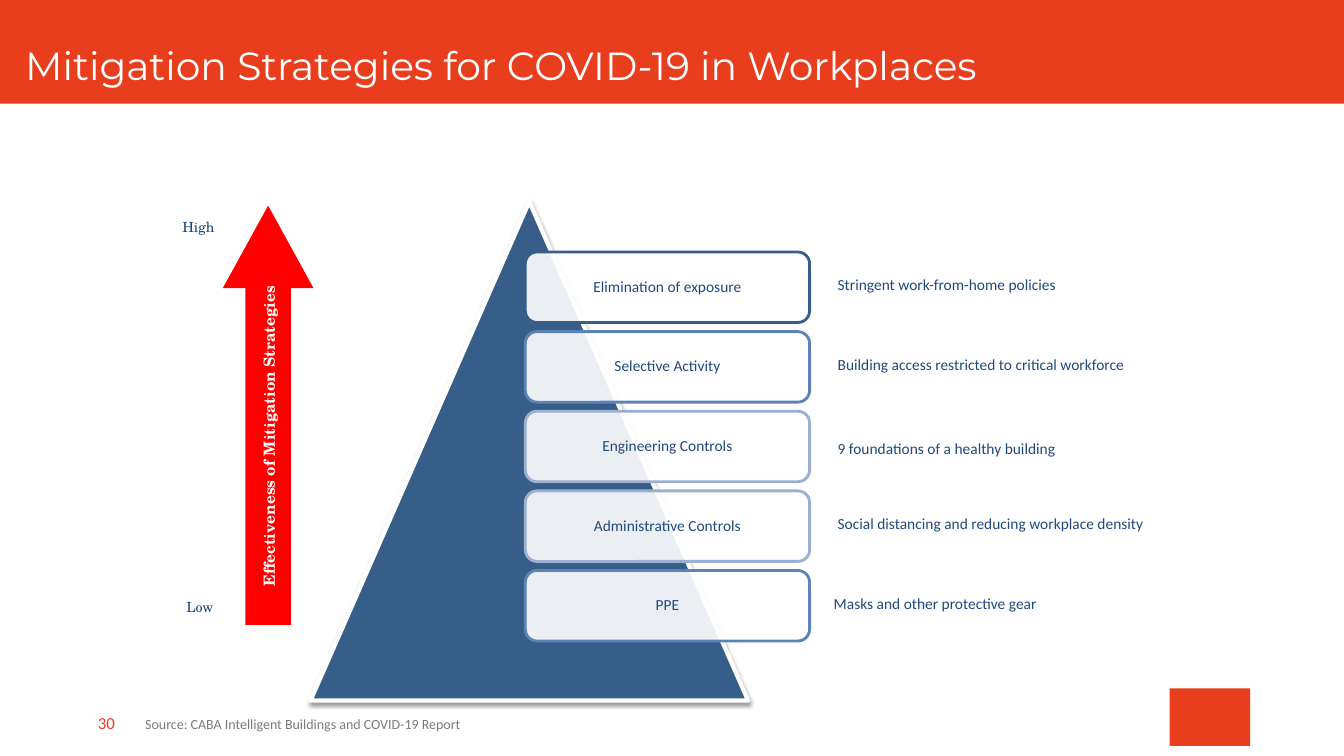
from dataclasses import dataclass

from lxml import etree
from pptx import Presentation
from pptx.dml.color import RGBColor
from pptx.enum.shapes import MSO_SHAPE
from pptx.enum.text import MSO_ANCHOR, MSO_AUTO_SIZE, PP_ALIGN
from pptx.oxml.ns import qn
from pptx.util import Inches, Pt

RECTANGLE = MSO_SHAPE.RECTANGLE
ROUNDED = MSO_SHAPE.ROUNDED_RECTANGLE
TRIANGLE = MSO_SHAPE.ISOSCELES_TRIANGLE
UP_ARROW = MSO_SHAPE.UP_ARROW
TOP, MIDDLE = MSO_ANCHOR.TOP, MSO_ANCHOR.MIDDLE
LEFT, CENTER, JUSTIFY = PP_ALIGN.LEFT, PP_ALIGN.CENTER, PP_ALIGN.JUSTIFY
FIXED = MSO_AUTO_SIZE.NONE

ORANGE = RGBColor(0xE8, 0x3E, 0x1D)
WHITE = RGBColor(0xFF, 0xFF, 0xFF)
GRAY = RGBColor(0x7B, 0x7B, 0x7B)
RED = RGBColor(0xFF, 0x00, 0x00)
NAVY = RGBColor(0x1F, 0x49, 0x7D)
DEEP_BLUE = RGBColor(0x36, 0x5E, 0x89)
MID_BLUE = RGBColor(0x5C, 0x83, 0xB8)
PALE_BLUE = RGBColor(0x9B, 0xAF, 0xD0)

SANS, SERIF, HEADING = "Calibri", "TeX Gyre Schola", "Montserrat"
TITLE_ONLY = 5
NO_INSETS = (0, 0, 0, 0)
TEXT_INSETS = (0.1, 0.05, 0.1, 0.05)
LEVEL_INSETS = (0.05, 0.05, 0.05, 0.05)
LEVEL_TOP, LEVEL_PITCH = 2.5, 0.79


@dataclass
class Box:
    left: float
    top: float
    width: float
    height: float

    def lengths(self) -> list:
        return [Inches(v) for v in (self.left, self.top, self.width, self.height)]


@dataclass
class TextStyle:
    size: float
    color: RGBColor
    font: str = SANS
    bold: bool = False
    align: int = LEFT
    anchor: int = TOP
    spacing: float = 1.0
    insets: tuple = TEXT_INSETS


@dataclass
class Level:
    name: str
    border: RGBColor
    measure: str
    measure_width: float
    measure_left: float = 8.21
    measure_drop: float = 0.18


@dataclass
class Label:
    text: str
    box: Box
    style: TextStyle
    rotation: float = 0


TITLE_STYLE = TextStyle(28, WHITE, HEADING, insets=(0, 0.01, 0, 0))
LEVEL_STYLE = TextStyle(11, NAVY, align=CENTER, anchor=MIDDLE, spacing=0.9, insets=LEVEL_INSETS)
MEASURE_STYLE = TextStyle(11, NAVY)
SCALE_STYLE = TextStyle(10, NAVY, SERIF, align=JUSTIFY, anchor=MIDDLE, spacing=1.6)
ARROW_STYLE = TextStyle(11, WHITE, SERIF, True, CENTER, MIDDLE)
NUMBER_STYLE = TextStyle(12, ORANGE, spacing=1.03, insets=NO_INSETS)
SOURCE_STYLE = TextStyle(10, GRAY, spacing=1.04, insets=NO_INSETS)

LEVELS = [
    Level("Elimination of exposure", DEEP_BLUE, "Stringent work-from-home policies", 2.97),
    Level("Selective Activity", MID_BLUE, "Building access restricted to critical workforce", 3.87),
    Level("Engineering Controls", PALE_BLUE, "9 foundations of a healthy building", 2.97,
          measure_drop=0.23),
    Level("Administrative Controls", PALE_BLUE,
          "Social distancing and reducing workplace density", 4.17),
    Level("PPE", MID_BLUE, "Masks and other protective gear", 2.81, measure_left=8.17),
]

LABELS = [
    Label("Low", Box(1.75, 5.78, 0.59, 0.39), SCALE_STYLE),
    Label("High", Box(1.71, 2.01, 0.65, 0.39), SCALE_STYLE),
    Label("Effectiveness of Mitigation Strategies", Box(0.79, 4.1, 3.75, 0.45), ARROW_STYLE, 270),
    Label("30", Box(0.97, 7.06, 0.25, 0.19), NUMBER_STYLE),
    Label("Source: CABA Intelligent Buildings and COVID-19 Report",
          Box(1.44, 7.09, 3.75, 0.19), SOURCE_STYLE),
]


def apply(target, values: dict) -> None:
    for name, value in values.items():
        setattr(target, name, value)


def write(shape, text: str, style: TextStyle) -> None:
    frame = shape.text_frame
    frame.text = text
    sides = ("margin_left", "margin_top", "margin_right", "margin_bottom")
    apply(frame, dict(zip(sides, map(Inches, style.insets))))
    apply(frame, {"word_wrap": True, "auto_size": FIXED, "vertical_anchor": style.anchor})
    paragraph = frame.paragraphs[0]
    apply(paragraph, {"alignment": style.align, "line_spacing": style.spacing})
    font = paragraph.runs[0].font
    apply(font, {"size": Pt(style.size), "name": style.font, "bold": style.bold})
    font.color.rgb = style.color


def add_label(slide, label: Label) -> None:
    text_box = slide.shapes.add_textbox(*label.box.lengths())
    text_box.rotation = label.rotation
    write(text_box, label.text, label.style)


def add_figure(slide, preset: int, box: Box, fill: RGBColor,
               border: RGBColor | None = None, border_width: float = 0):
    figure = slide.shapes.add_shape(preset, *box.lengths())
    figure.shadow.inherit = False
    figure.fill.solid()
    figure.fill.fore_color.rgb = fill
    if border is None:
        figure.line.fill.background()
    else:
        figure.line.color.rgb = border
        figure.line.width = Pt(border_width)
    return figure


def set_opacity(color_element, percent: int) -> None:
    etree.SubElement(color_element, qn("a:alpha"), val=str(percent * 1000))


def add_drop_shadow(figure) -> None:
    effects = figure._element.spPr.find(qn("a:effectLst"))
    shadow = etree.SubElement(effects, qn("a:outerShdw"), blurRad=str(Pt(3.1)),
                              dist=str(Pt(1.6)), dir="5400000", rotWithShape="0")
    set_opacity(etree.SubElement(shadow, qn("a:srgbClr"), val="000000"), 38)


def add_level(slide, index: int, level: Level) -> None:
    top = LEVEL_TOP + index * LEVEL_PITCH
    card = add_figure(slide, ROUNDED, Box(5.21, top, 2.82, 0.7), WHITE, level.border, 2)
    set_opacity(card._element.spPr.find(qn("a:solidFill"))[0], 90)
    write(card, level.name, LEVEL_STYLE)
    measure_box = Box(level.measure_left, top + level.measure_drop, level.measure_width, 0.34)
    add_label(slide, Label(level.measure, measure_box, MEASURE_STYLE))


def main() -> None:
    deck = Presentation()
    deck.slide_width, deck.slide_height = Inches(13.33), Inches(7.5)
    slide = deck.slides.add_slide(deck.slide_layouts[TITLE_ONLY])

    # Banner with the title in front, and the emblem block
    banner = add_figure(slide, RECTANGLE, Box(0, 0, 13.33, 1.03), ORANGE)
    heading = slide.shapes.title
    heading._element.addprevious(banner._element)
    heading.left, heading.top, heading.width, heading.height = Box(0.25, 0.4, 11.5, 0.49).lengths()
    write(heading, "Mitigation Strategies for COVID-19 in Workplaces", TITLE_STYLE)
    add_figure(slide, RECTANGLE, Box(11.6, 6.83, 0.8, 0.57), ORANGE)

    # Pyramid and its levels
    pyramid = add_figure(slide, TRIANGLE, Box(3.08, 2, 4.34, 4.95), DEEP_BLUE, WHITE, 3)
    add_drop_shadow(pyramid)
    for index, level in enumerate(LEVELS):
        add_level(slide, index, level)

    # Effectiveness arrow
    effectiveness = add_figure(slide, UP_ARROW, Box(2.21, 2.04, 0.9, 4.16), RED)
    effectiveness.adjustments[0] = 0.5
    effectiveness.adjustments[1] = 0.91

    # Scale, arrow and footer labels
    for label in LABELS:
        add_label(slide, label)

    deck.save("out.pptx")


if __name__ == "__main__":
    main()
